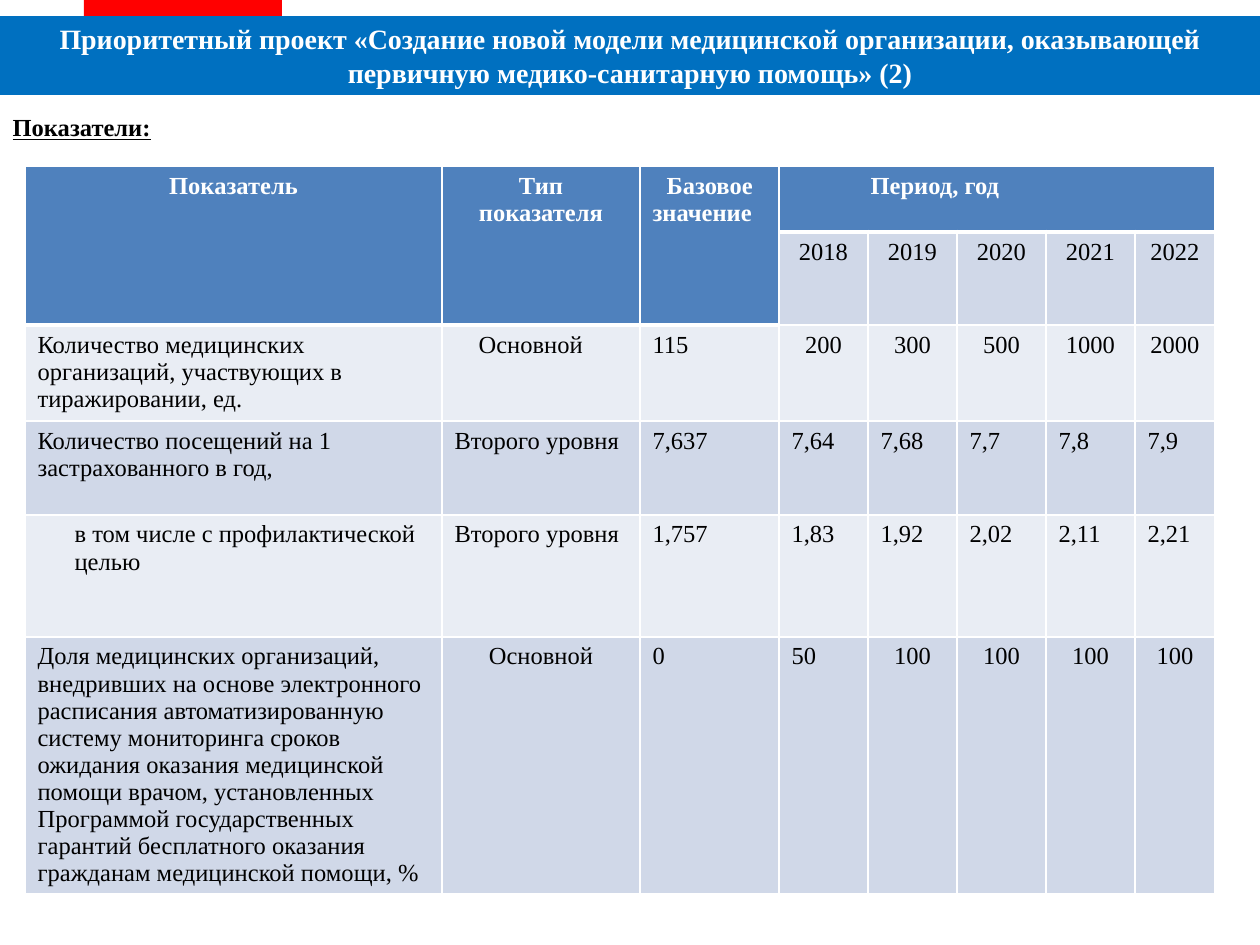
import pptx
import pptx.dml.color
import pptx.enum.text
import pptx.oxml
import pptx.oxml.ns
import pptx.util
from dataclasses import dataclass

EMU_PER_PX = 914400 / 126
ALIGN = pptx.enum.text.PP_ALIGN
ANCHOR = pptx.enum.text.MSO_ANCHOR


@dataclass(frozen=True)
class Theme:
    font: str = "Times New Roman"
    title_size: int = 16
    text_size: int = 14
    white: str = "FFFFFF"
    black: str = "000000"
    banner: str = "0070C0"
    accent: str = "FF0000"
    header: str = "4F81BD"
    dark_band: str = "D0D8E8"
    light_band: str = "E9EDF4"
    border: int = 1
    heavy_border: int = 3


THEME = Theme()
COLUMN_WIDTHS = [417, 198, 139] + [89] * 4 + [80]
ROW_HEIGHTS = [66, 93, 96, 94, 122, 256]
LEAD_COLUMNS = 3
HEADINGS = ["Показатель", "Тип показателя", "Базовое значение", "Период, год"]
YEARS = ["2018", "2019", "2020", "2021", "2022"]
INDICATORS = [
    ["Количество медицинских организаций, участвующих в тиражировании, ед.",
     "Основной", "115", "200", "300", "500", "1000", "2000"],
    ["Количество посещений на 1 застрахованного в год,",
     "Второго уровня", "7,637", "7,64", "7,68", "7,7", "7,8", "7,9"],
    ["в том числе с профилактической целью",
     "Второго уровня", "1,757", "1,83", "1,92", "2,02", "2,11", "2,21"],
    ["Доля медицинских организаций, внедривших на основе электронного "
     "расписания автоматизированную систему мониторинга сроков ожидания "
     "оказания медицинской помощи врачом, установленных Программой "
     "государственных гарантий бесплатного оказания гражданам медицинской "
     "помощи, %",
     "Основной", "0", "50", "100", "100", "100", "100"],
]
CENTERED = ({(0, 0), (0, 1), (5, 1)} | {(1, c) for c in range(3, 8)}
            | {(2, c) for c in range(3, 8)} | {(5, c) for c in range(4, 8)})
INDENTS = {(0, 2): (0, 14), (0, 3): (79, 0), (2, 1): (24, 0), (4, 0): (37, 0)}


def px(length):
    return pptx.util.Emu(round(length * EMU_PER_PX))


def rgb(color):
    return pptx.dml.color.RGBColor.from_string(color)


def place(part, box):
    part.left, part.top, part.width, part.height = map(px, box)


def write(frame, text, size=THEME.text_size, color=THEME.black, bold=False,
          underline=False, align=ALIGN.LEFT, margin=0, indent=0):
    paragraph = frame.paragraphs[0]
    paragraph.alignment = align
    properties = paragraph._p.get_or_add_pPr()
    properties.set("marL", str(px(margin)))
    properties.set("indent", str(px(indent)))
    run = paragraph.add_run()
    run.text = text
    run.font.name = THEME.font
    run.font.size = pptx.util.Pt(size)
    run.font.color.rgb = rgb(color)
    run.font.bold = bold
    run.font.underline = underline
    return paragraph


def add_banner(slide, box):
    left, top, width, height = box
    banner = slide.shapes.title
    place(banner, box)
    banner.fill.solid()
    banner.fill.fore_color.rgb = rgb(THEME.banner)
    banner.text_frame.auto_size = pptx.enum.text.MSO_AUTO_SIZE.NONE
    banner.text_frame.vertical_anchor = ANCHOR.MIDDLE
    write(banner.text_frame,
          "Приоритетный проект «Создание новой модели медицинской организации, "
          "оказывающей первичную медико-санитарную помощь» (2)",
          size=THEME.title_size, color=THEME.white, bold=True,
          align=ALIGN.CENTER)
    tab = slide.shapes.add_shape(
        pptx.enum.shapes.MSO_SHAPE.RECTANGLE,
        *map(px, (left + 84, top - 16, 198, 16)))
    tab.shadow.inherit = False
    tab.fill.solid()
    tab.fill.fore_color.rgb = rgb(THEME.accent)
    tab.line.fill.background()


def add_subheading(slide, box):
    subheading = slide.placeholders[1]
    place(subheading, box)
    subheading.text_frame.auto_size = pptx.enum.text.MSO_AUTO_SIZE.NONE
    paragraph = write(subheading.text_frame, "Показатели:", bold=True,
                      underline=True, margin=48, indent=-48)
    paragraph._p.get_or_add_pPr().append(pptx.oxml.parse_xml(
        f"<a:buNone {pptx.oxml.ns.nsdecls('a')}/>"))


def set_borders(cell, top, bottom):
    widths = {"lnL": THEME.border, "lnR": THEME.border,
              "lnT": top, "lnB": bottom}
    for side, width in widths.items():
        cell._tc.get_or_add_tcPr().append(pptx.oxml.parse_xml(
            f'<a:{side} {pptx.oxml.ns.nsdecls("a")} w="{width * 12700}">'
            f'<a:solidFill><a:srgbClr val="{THEME.white}"/></a:solidFill>'
            f'</a:{side}>'))


def is_header(row, column):
    return row == 0 or (row == 1 and column < LEAD_COLUMNS)


def border_below(row, column):
    return THEME.heavy_border if is_header(row, column) else THEME.border


def add_indicators(slide, left, top):
    rows, columns = len(ROW_HEIGHTS), len(COLUMN_WIDTHS)
    table = slide.shapes.add_table(
        rows, columns,
        *map(px, (left, top, sum(COLUMN_WIDTHS), sum(ROW_HEIGHTS)))).table
    table.first_row = table.horz_banding = False
    for column, width in zip(table.columns, COLUMN_WIDTHS):
        column.width = px(width)
    for row, height in zip(table.rows, ROW_HEIGHTS):
        row.height = px(height)
    for column in range(LEAD_COLUMNS):
        table.cell(0, column).merge(table.cell(1, column))
    table.cell(0, LEAD_COLUMNS).merge(table.cell(0, columns - 1))

    content = [HEADINGS + [""] * (columns - len(HEADINGS)),
               [""] * LEAD_COLUMNS + YEARS] + INDICATORS
    for row, texts in enumerate(content):
        for column, text in enumerate(texts):
            cell = table.cell(row, column)
            header = is_header(row, column)
            band = THEME.dark_band if row % 2 else THEME.light_band
            above = border_below(row - 1, column) if row > 1 or (
                row == 1 and column >= LEAD_COLUMNS) else THEME.border
            set_borders(cell, above, border_below(row, column))
            cell.fill.solid()
            cell.fill.fore_color.rgb = rgb(THEME.header if header else band)
            if text:
                margin, indent = INDENTS.get((row, column), (0, 0))
                centered = (row, column) in CENTERED
                write(cell.text_frame, text, bold=header,
                      color=THEME.white if header else THEME.black,
                      align=ALIGN.CENTER if centered else ALIGN.LEFT,
                      margin=margin, indent=indent)


def main():
    deck = pptx.Presentation()
    deck.slide_width, deck.slide_height = px(1260), px(945)
    slide = deck.slides.add_slide(deck.slide_layouts[1])
    add_banner(slide, (0, 16, 1260, 79))
    add_subheading(slide, (0, 106, 1245, 624))
    add_indicators(slide, 25, 166)
    deck.save("out.pptx")


if __name__ == "__main__":
    main()
